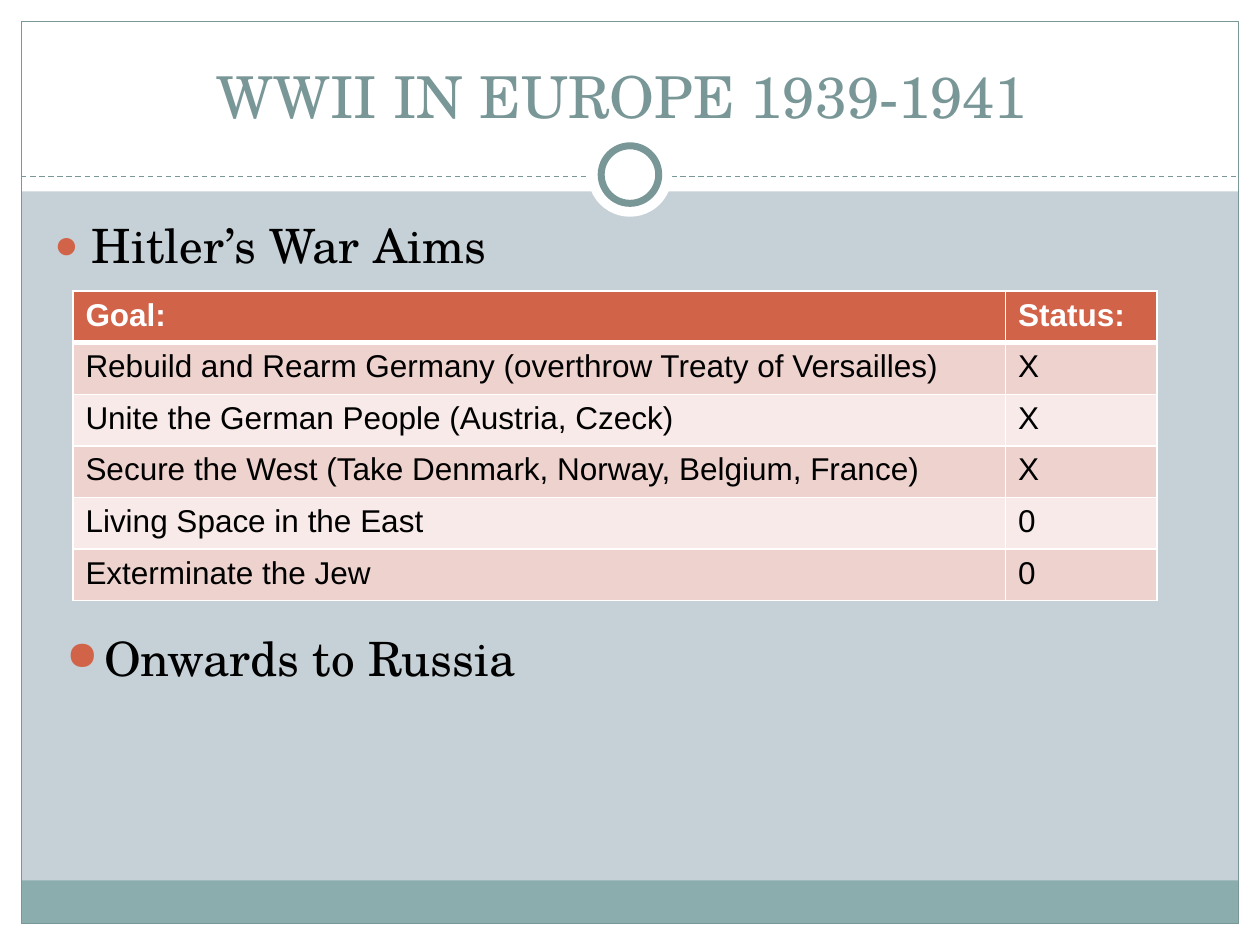
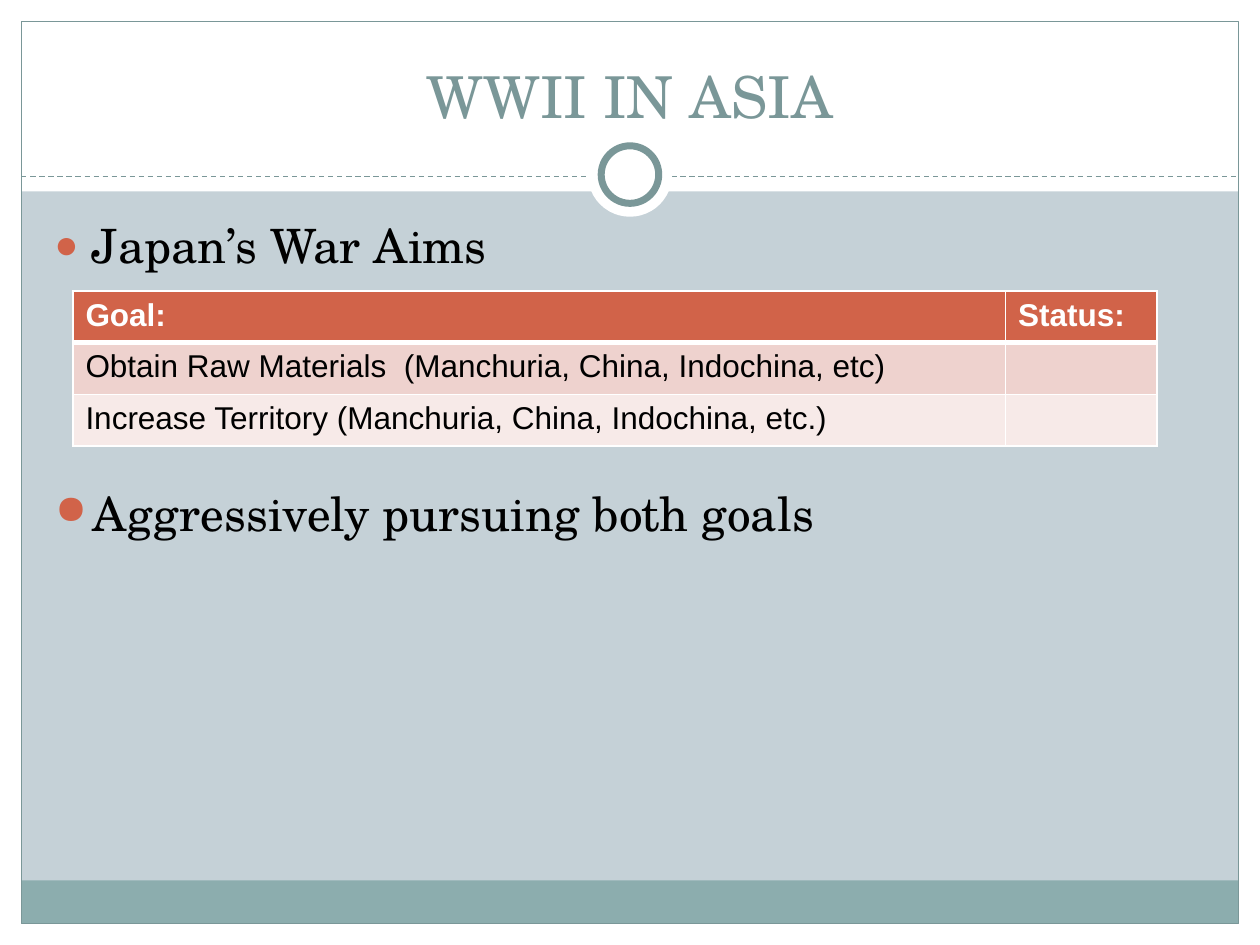
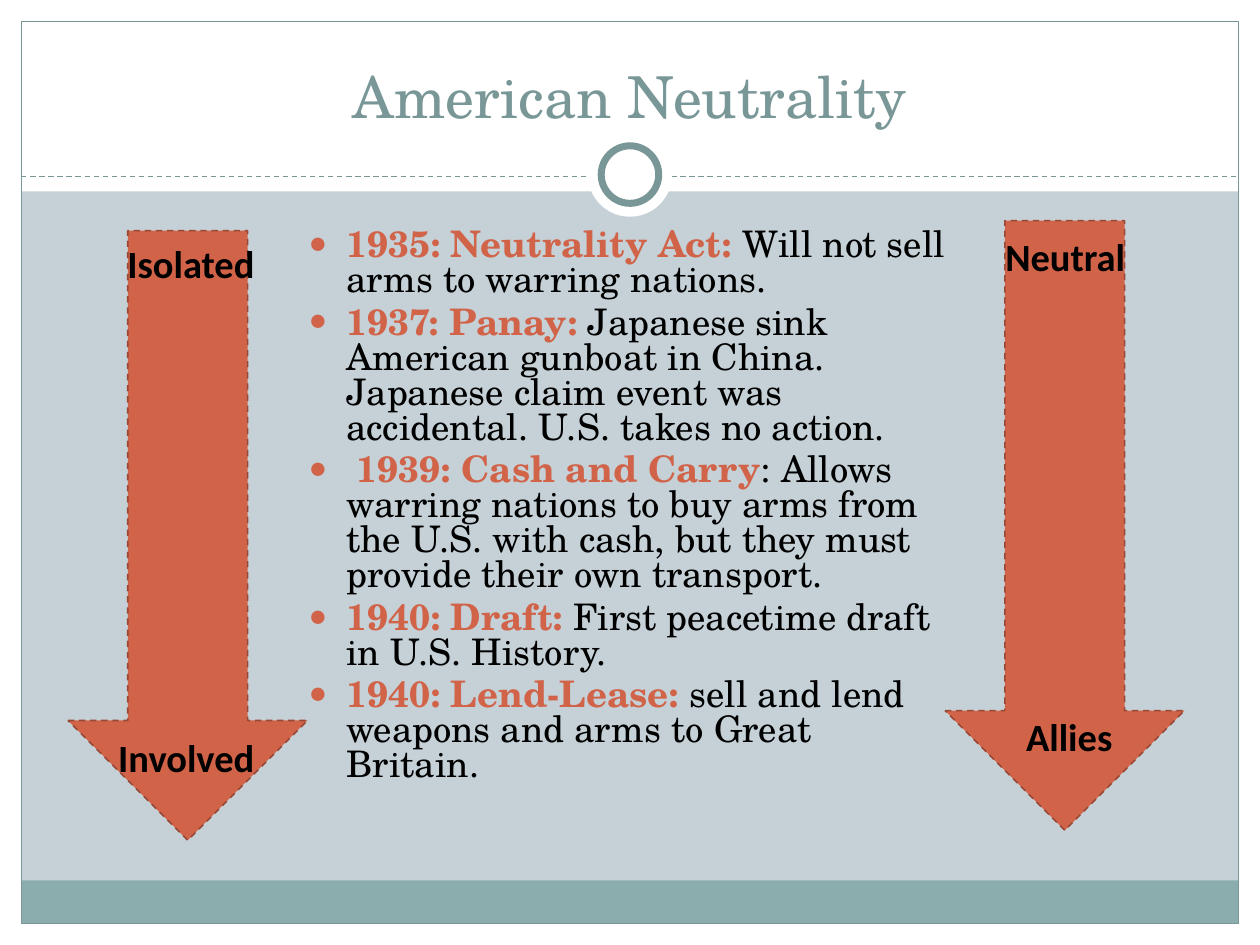
from dataclasses import dataclass

from lxml.etree import SubElement
from pptx import Presentation
from pptx.dml.color import RGBColor
from pptx.enum.dml import MSO_LINE
from pptx.enum.shapes import MSO_CONNECTOR, MSO_SHAPE
from pptx.enum.text import MSO_ANCHOR, MSO_AUTO_SIZE, PP_ALIGN
from pptx.oxml import parse_xml
from pptx.oxml.ns import nsdecls, qn
from pptx.util import Cm, Pt

COLORS = {
    "background": "C5D1D7", "white": "FFFFFF", "black": "000000",
    "slate": "7A9798", "teal": "8CADAE", "rust": "D16349",
    "dark_rust": "984835", "band_dark": "EED2CE", "band_light": "F7EAE8",
}
SERIF, SANS, LABEL = "TeX Gyre Schola", "Arial", "Calibri"
WIDTH, HEIGHT, MARGIN = 25.4, 19.05, 0.43
HEADER_HEIGHT = 3.86
ROW_HEIGHT = 1.04
COLUMN_WIDTHS = (18.8, 3.05)


@dataclass
class Area:
    left: float
    top: float
    width: float
    height: float

    def lengths(self) -> tuple:
        return Cm(self.left), Cm(self.top), Cm(self.width), Cm(self.height)


@dataclass
class FramePart:
    kind: MSO_SHAPE
    area: Area
    fill: str | None = None
    line: str | None = None
    weight: float = 0.75


@dataclass
class Goals:
    title: str
    heading: str
    rows: list[tuple[str, str]]
    note: str
    note_area: Area
    heading_height: float


@dataclass
class Event:
    name: str
    account: str


@dataclass
class Label:
    text: str
    area: Area


TITLE_AREA = Area(0.85, 0.64, 23.7, 2.11)
INNER_WIDTH = WIDTH - 2 * MARGIN
RECT, OVAL = MSO_SHAPE.RECTANGLE, MSO_SHAPE.OVAL
PANELS = [
    FramePart(RECT, Area(0, HEIGHT - MARGIN, WIDTH, MARGIN), "white"),
    FramePart(RECT, Area(0, 0, WIDTH, HEADER_HEIGHT), "white"),
    FramePart(RECT, Area(0, 0, MARGIN, HEIGHT), "white"),
    FramePart(RECT, Area(WIDTH - MARGIN, 0, MARGIN, HEIGHT), "white"),
    FramePart(RECT, Area(MARGIN, 17.75, INNER_WIDTH, 0.87), "teal"),
    FramePart(RECT, Area(MARGIN, MARGIN, INNER_WIDTH, HEIGHT - 2 * MARGIN), line="slate"),
]
RING = [
    FramePart(OVAL, Area(11.85, 2.67, 1.7, 1.7), "white"),
    FramePart(OVAL, Area(12.12, 2.94, 1.16, 1.16), "white", "slate", 4),
]

GOAL_SLIDES = [
    Goals("WWII IN EUROPE 1939-1941 ", "Hitler’s War Aims", [
        ("Rebuild and Rearm Germany (overthrow Treaty of Versailles)", "X"),
        ("Unite the German People (Austria, Czeck)", "X"),
        ("Secure the West (Take Denmark, Norway, Belgium, France)", "X"),
        ("Living Space in the East", "0"),
        ("Exterminate the Jew", "0"),
    ], "Onwards to Russia", Area(1.09, 12.57, 23.62, 1.45), 1.45),
    Goals("WWII IN ASIA", "Japan’s War Aims", [
        ("Obtain Raw Materials  (Manchuria, China, Indochina, etc)", ""),
        ("Increase Territory (Manchuria, China, Indochina, etc.)", ""),
    ], "Aggressively pursuing both goals", Area(0.86, 9.63, 23.62, 1.4), 1.4),
]

EVENTS = [
    Event("1935: Neutrality Act: ", "Will not sell arms to warring nations."),
    Event("1937: Panay: ", "Japanese sink American gunboat in China. Japanese claim "
          "event was accidental. U.S. takes no action."),
    Event(" 1939: Cash and Carry", ": Allows warring nations to buy arms from the U.S. "
          "with cash, but they must provide their own transport."),
    Event("1940: Draft: ", "First peacetime draft in U.S. History."),
    Event("1940: Lend-Lease: ", "sell and lend weapons and arms to Great Britain."),
]
ARROWS = [Area(1.37, 4.65, 4.83, 12.29), Area(19.05, 4.45, 4.83, 12.29)]
LABELS = [
    Label("Isolated", Area(2.26, 4.72, 3.18, 1.19)),
    Label("Involved", Area(2.08, 14.68, 3.35, 1.19)),
    Label("Neutral", Area(19.94, 4.57, 3.07, 1.19)),
    Label("Allies", Area(20.02, 14.25, 3.07, 1.19)),
]


def rgb(name: str) -> RGBColor:
    return RGBColor.from_string(COLORS[name])


def style_span(span, font: str, size: float, color: str, bold: bool = False) -> None:
    span.font.name = font
    span.font.size = Pt(size)
    span.font.bold = bold
    span.font.color.rgb = rgb(color)


def place(box, area: Area) -> None:
    box.left, box.top, box.width, box.height = area.lengths()


def draw_part(page, part: FramePart):
    shape = page.shapes.add_shape(part.kind, *part.area.lengths())
    shape.shadow.inherit = False
    if part.fill:
        shape.fill.solid()
        shape.fill.fore_color.rgb = rgb(part.fill)
    else:
        shape.fill.background()
    if part.line:
        shape.line.color.rgb = rgb(part.line)
        shape.line.width = Pt(part.weight)
    else:
        shape.line.fill.background()
    return shape


def draw_divider(page):
    divider = page.shapes.add_connector(
        MSO_CONNECTOR.STRAIGHT, Cm(MARGIN), Cm(3.56), Cm(WIDTH - MARGIN), Cm(3.56))
    divider.line.color.rgb = rgb("slate")
    divider.line.width = Pt(0.75)
    divider.line.dash_style = MSO_LINE.DASH
    SubElement(divider.element.spPr, qn("a:effectLst"))
    return divider


def build_layout_frame(layout, page) -> None:
    """Draw the shared frame and move it to the layout."""
    layout.background.fill.solid()
    layout.background.fill.fore_color.rgb = rgb("background")
    for holder in list(layout.placeholders):
        if holder.placeholder_format.idx >= 10:
            holder.element.getparent().remove(holder.element)
    frame = [draw_part(page, part) for part in PANELS]
    frame.append(draw_divider(page))
    frame += [draw_part(page, part) for part in RING]
    for shape in frame:
        layout.shapes.element.append(shape.element)


def set_title(page, text: str) -> None:
    title = page.shapes.title
    place(title, TITLE_AREA)
    frame = title.text_frame
    frame.text = text
    frame.auto_size = MSO_AUTO_SIZE.NONE
    frame.vertical_anchor = MSO_ANCHOR.BOTTOM
    para = frame.paragraphs[0]
    para.alignment = PP_ALIGN.CENTER
    style_span(para.runs[0], SERIF, 33, "slate")


def prepare_list(box, area: Area):
    place(box, area)
    frame = box.text_frame
    frame.word_wrap = True
    frame.auto_size = MSO_AUTO_SIZE.NONE
    frame.vertical_anchor = MSO_ANCHOR.TOP
    return frame


def add_bullet(para, space_before: float = 0, line_spacing: float = 1.0) -> None:
    para.space_before = Pt(space_before)
    para.line_spacing = line_spacing
    properties = para._p.get_or_add_pPr()
    properties.set("marL", str(Cm(0.76)))
    properties.set("indent", str(-Cm(0.76)))
    color = SubElement(properties, qn("a:buClr"))
    SubElement(color, qn("a:srgbClr"), val=COLORS["rust"])
    SubElement(properties, qn("a:buSzPct"), val="85000")
    SubElement(properties, qn("a:buChar"), char="●")


def set_heading(box, area: Area, text: str) -> None:
    frame = prepare_list(box, area)
    frame.text = text
    para = frame.paragraphs[0]
    add_bullet(para)
    style_span(para.runs[0], SERIF, 27, "black")


def set_borders(cell, top: float, bottom: float) -> None:
    properties = cell._tc.get_or_add_tcPr()
    weights = {"lnL": 1, "lnR": 1, "lnT": top, "lnB": bottom}
    for index, (side, weight) in enumerate(weights.items()):
        properties.insert(index, parse_xml(
            f'<a:{side} {nsdecls("a")} w="{Pt(weight)}"><a:solidFill>'
            f'<a:srgbClr val="{COLORS["white"]}"/></a:solidFill></a:{side}>'))


def add_goal_table(page, goals: list[tuple[str, str]]) -> None:
    rows = [("Goal:", "Status:"), *goals]
    area = Area(1.47, 5.87, sum(COLUMN_WIDTHS), ROW_HEIGHT * len(rows))
    table = page.shapes.add_table(len(rows), len(COLUMN_WIDTHS), *area.lengths()).table
    for column, width in zip(table.columns, COLUMN_WIDTHS):
        column.width = Cm(width)
    for row_index, row in enumerate(rows):
        is_header = row_index == 0
        fill = "rust" if is_header else ("band_light", "band_dark")[row_index % 2]
        for column_index, text in enumerate(row):
            cell = table.cell(row_index, column_index)
            cell.fill.solid()
            cell.fill.fore_color.rgb = rgb(fill)
            set_borders(cell, 3 if row_index == 1 else 1, 3 if is_header else 1)
            cell.text_frame.text = text
            for span in cell.text_frame.paragraphs[0].runs:
                style_span(span, SANS, 18, "white" if is_header else "black", is_header)


def build_goal_slide(page, goals: Goals) -> None:
    set_title(page, goals.title)
    set_heading(page.placeholders[1], Area(0.84, 4.24, 23.62, goals.heading_height),
                goals.heading)
    add_goal_table(page, goals.rows)
    note = page.shapes.add_textbox(*goals.note_area.lengths())
    set_heading(note, goals.note_area, goals.note)


def add_label(page, label: Label) -> None:
    box = page.shapes.add_textbox(*label.area.lengths())
    box.text_frame.word_wrap = False
    box.text_frame.text = label.text
    para = box.text_frame.paragraphs[0]
    para.alignment = PP_ALIGN.CENTER
    style_span(para.runs[0], LABEL, 22, "black", True)


def build_neutrality_slide(page) -> None:
    set_title(page, "American Neutrality")

    # Timeline of events
    frame = prepare_list(page.placeholders[1], Area(5.97, 4.5, 13.39, 12.22))
    for index, event in enumerate(EVENTS):
        para = frame.add_paragraph() if index else frame.paragraphs[0]
        add_bullet(para, 4.2 if index else 0, 0.8)
        for text, color, bold in ((event.name, "rust", True), (event.account, "black", False)):
            span = para.add_run()
            span.text = text
            style_span(span, SERIF, 20.9, color, bold)

    # Arrows and their end labels
    for area in ARROWS:
        arrow = draw_part(page, FramePart(MSO_SHAPE.DOWN_ARROW, area, "rust", "dark_rust", 0.9))
        arrow.line.dash_style = MSO_LINE.DASH
    for label in LABELS:
        add_label(page, label)


def main() -> None:
    deck = Presentation()
    deck.slide_width, deck.slide_height = Cm(WIDTH), Cm(HEIGHT)
    layout = deck.slide_layouts[1]
    pages = [deck.slides.add_slide(layout) for _ in range(len(GOAL_SLIDES) + 1)]
    build_layout_frame(layout, pages[0])
    for page, goals in zip(pages, GOAL_SLIDES):
        build_goal_slide(page, goals)
    build_neutrality_slide(pages[-1])
    deck.save("out.pptx")


if __name__ == "__main__":
    main()
